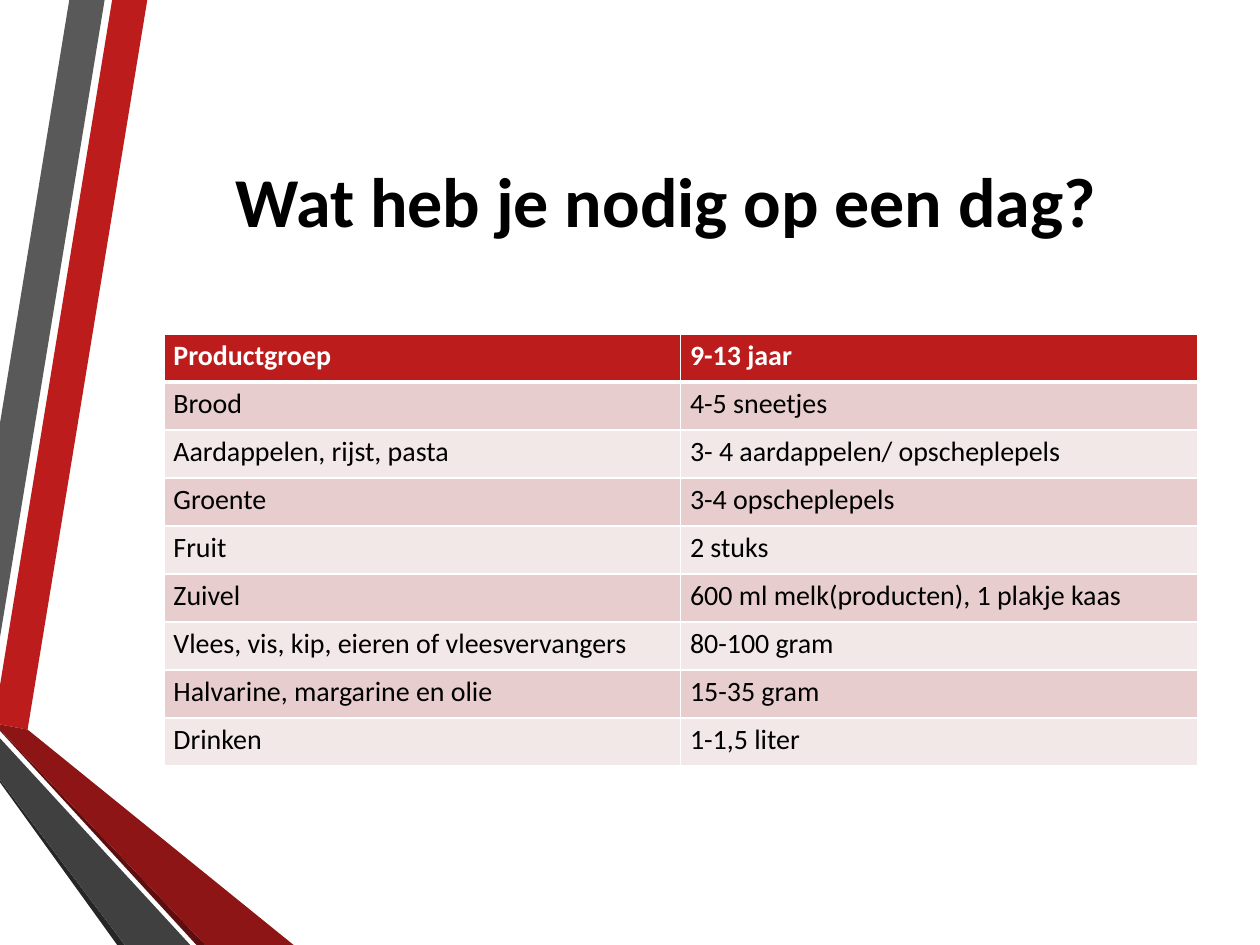
from lxml import etree
from pptx import Presentation
from pptx.dml.color import RGBColor
from pptx.enum.text import MSO_ANCHOR, PP_ALIGN
from pptx.oxml.ns import qn
from pptx.util import Pt

MIDDLE = MSO_ANCHOR.MIDDLE
CENTER = PP_ALIGN.CENTER
FONT = "Calibri"
RED, PINK, PALE = "BC1C1C", "E7CDCD", "F3E8E8"
WHITE, BLACK = "FFFFFF", "000000"


def color(code):
    return RGBColor.from_string(code)


def edge(cell, side, width):
    """Draw a white border on one side of a cell."""
    props = cell._tc.get_or_add_tcPr()
    line = etree.SubElement(props, qn("a:ln" + side), w=str(Pt(width)))
    fill = etree.SubElement(line, qn("a:solidFill"))
    etree.SubElement(fill, qn("a:srgbClr"), val=WHITE)


prs = Presentation()
prs.slide_width, prs.slide_height = Pt(720), Pt(540)
slide = prs.slides.add_slide(prs.slide_layouts[6])
shapes = slide.shapes

# Folded ribbons along the left edge, back to front
ribbons = [
    (RED, [(0, 391.7), (0, 414), (15.8, 416.9), (84.2, 0), (64.1, 0)]),
    ("595959", [(59.8, 0), (39.6, 0), (0, 241.9), (0, 364.3)]),
    ("262626", [(0, 445.7), (0, 447.1), (67, 540), (71.3, 540)]),
    ("5E0E0E", [(0, 416.9), (0, 417.6), (112.3, 540), (117.4, 540)]),
    ("8D1515", [(0, 416.9), (117.4, 540), (167.8, 540), (15.8, 416.9), (0, 414)]),
    ("404040", [(0, 445.7), (71.3, 540), (108.7, 540), (0, 421.9)]),
]
for code, points in ribbons:
    start, *rest = [(Pt(x), Pt(y)) for x, y in points]
    pen = shapes.build_freeform(*start)
    pen.add_line_segments(rest, close=True)
    band = pen.convert_to_shape()
    band.shadow.inherit = False
    band.fill.solid()
    band.fill.fore_color.rgb = color(code)
    band.line.fill.background()

# Title
frame = shapes.add_textbox(Pt(77), Pt(36), Pt(607), Pt(156)).text_frame
frame.word_wrap = True
frame.vertical_anchor = MIDDLE
para = frame.paragraphs[0]
para.text = "Wat heb je nodig op een dag?"
para.alignment = CENTER
para.font.name, para.font.size, para.font.bold = FONT, Pt(40), True
para.font.color.rgb = color(BLACK)

# Table of daily needs
rows = [
    ("Productgroep", "9-13 jaar"),
    ("Brood", "4-5 sneetjes"),
    ("Aardappelen, rijst, pasta", "3- 4 aardappelen/ opscheplepels"),
    ("Groente", "3-4 opscheplepels"),
    ("Fruit", "2 stuks"),
    ("Zuivel", "600 ml melk(producten), 1 plakje kaas"),
    ("Vlees, vis, kip, eieren of vleesvervangers", "80-100 gram"),
    ("Halvarine, margarine en olie", "15-35 gram"),
    ("Drinken", "1-1,5 liter"),
]
table = shapes.add_table(len(rows), 2, Pt(93.75), Pt(190.8), Pt(590.4), Pt(247)).table
for r, texts in enumerate(rows):
    table.rows[r].height = Pt(27.44)
    head = r == 0
    shade = RED if head else PINK if r % 2 else PALE
    for c, text in enumerate(texts):
        cell = table.cell(r, c)
        cell.margin_left = cell.margin_right = Pt(5.4)
        cell.margin_top = cell.margin_bottom = 0
        for side in "LRTB":
            thick = (head and side == "B") or (r == 1 and side == "T")
            edge(cell, side, 3 if thick else 1)
        cell.fill.solid()
        cell.fill.fore_color.rgb = color(shade)
        para = cell.text_frame.paragraphs[0]
        para.text = text
        para.line_spacing = 1.15
        para.font.name, para.font.size, para.font.bold = FONT, Pt(16), head
        para.font.color.rgb = color(WHITE if head else BLACK)

prs.save("out.pptx")
